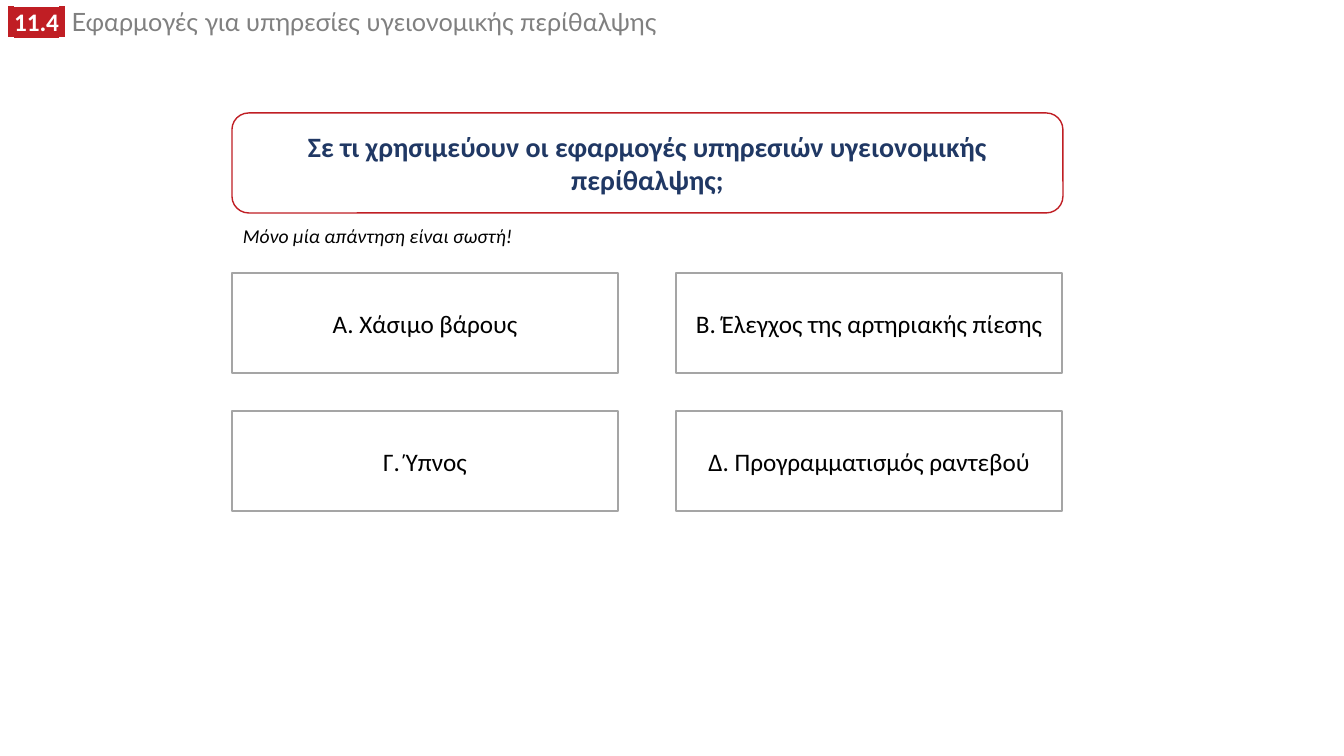
from lxml import etree
from pptx import Presentation
from pptx.dml.color import RGBColor
from pptx.enum import shapes, text
from pptx.oxml import ns
from pptx import util as u

RED = RGBColor(0xC0, 0x1E, 0x24)
NAVY = RGBColor(0x20, 0x38, 0x64)
GRAY = RGBColor(0x80, 0x80, 0x80)
BORDER = RGBColor(0xA5, 0xA5, 0xA5)
WHITE = RGBColor(0xFF, 0xFF, 0xFF)
BLACK = RGBColor(0, 0, 0)

# Content
BADGE = [(" ", "Lato"), ("11.4", "Calibri"), (" ", "Lato")]
TITLE = " Εφαρμογές για υπηρεσίες υγειονομικής περίθαλψης"
QUESTION = "Σε τι χρησιμεύουν οι εφαρμογές υπηρεσιών υγειονομικής περίθαλψης;"
HINT = "Μόνο μία απάντηση είναι σωστή!"
ANSWERS = [
    "A. Χάσιμο βάρους",
    "B. Έλεγχος της αρτηριακής πίεσης",
    "Γ. Ύπνος",
    "Δ. Προγραμματισμός ραντεβού",
]

# Layout in px
SLIDE_WIDTH, SLIDE_HEIGHT = 1344, 756
LEFT, QUESTION_TOP, QUESTION_WIDTH = 232, 113, 831
BOX_WIDTH, BOX_HEIGHT = 386, 100
ANSWERS_TOP, COLUMN_STEP, ROW_STEP = 273, 444, 138


def px(value):
    return u.Emu(round(value * 914400 / 100.8))


def add_run(paragraph, words, size=18, color=BLACK, font="Calibri",
            bold=False, italic=False, highlight=None):
    run = paragraph.add_run()
    run.text = words
    run.font.size = u.Pt(size)
    run.font.name = font
    run.font.bold = bold
    run.font.italic = italic
    run.font.color.rgb = color
    if highlight is not None:
        mark = etree.Element(ns.qn("a:highlight"))
        etree.SubElement(mark, ns.qn("a:srgbClr"), val=str(highlight))
        run.font.fill  # the highlight follows the solid fill
        run._r.rPr.find(ns.qn("a:solidFill")).addnext(mark)


def add_box(slide, kind, left, top, width, line, words, **text_format):
    shape = slide.shapes.add_shape(kind, px(left), px(top), px(width), px(BOX_HEIGHT))
    shape.shadow.inherit = False
    shape.fill.solid()
    shape.fill.fore_color.rgb = WHITE
    shape.line.color.rgb = line
    shape.line.width = u.Pt(1)
    frame = shape.text_frame
    frame.word_wrap = True
    frame.vertical_anchor = text.MSO_ANCHOR.MIDDLE
    paragraph = frame.paragraphs[0]
    paragraph.alignment = text.PP_ALIGN.CENTER
    add_run(paragraph, words, **text_format)


def add_label(slide, left, top, width, height, wrap):
    frame = slide.shapes.add_textbox(px(left), px(top), px(width), px(height)).text_frame
    frame.word_wrap = wrap
    frame.auto_size = text.MSO_AUTO_SIZE.SHAPE_TO_FIT_TEXT
    return frame.paragraphs[0]


def main():
    presentation = Presentation()
    presentation.slide_width = px(SLIDE_WIDTH)
    presentation.slide_height = px(SLIDE_HEIGHT)
    slide = presentation.slides.add_slide(presentation.slide_layouts[6])

    # Section number and title
    heading = add_label(slide, -2, 7, 960, 35, wrap=True)
    heading.line_spacing = 0.8
    for words, font in BADGE:
        add_run(heading, words, color=WHITE, font=font, bold=True, highlight=RED)
    add_run(heading, TITLE, color=GRAY, font="Lato")

    # Question
    add_box(slide, shapes.MSO_SHAPE.ROUNDED_RECTANGLE, LEFT, QUESTION_TOP,
            QUESTION_WIDTH, RED, QUESTION, size=20, color=NAVY, bold=True)

    # Answers in two columns
    for index, answer in enumerate(ANSWERS):
        row, column = divmod(index, 2)
        add_box(slide, shapes.MSO_SHAPE.RECTANGLE, LEFT + column * COLUMN_STEP,
                ANSWERS_TOP + row * ROW_STEP, BOX_WIDTH, BORDER, answer)

    # Hint under the question
    hint = add_label(slide, 233, 219, 291, 34, wrap=False)
    add_run(hint, HINT, size=14, italic=True)

    presentation.save("out.pptx")


if __name__ == "__main__":
    main()
